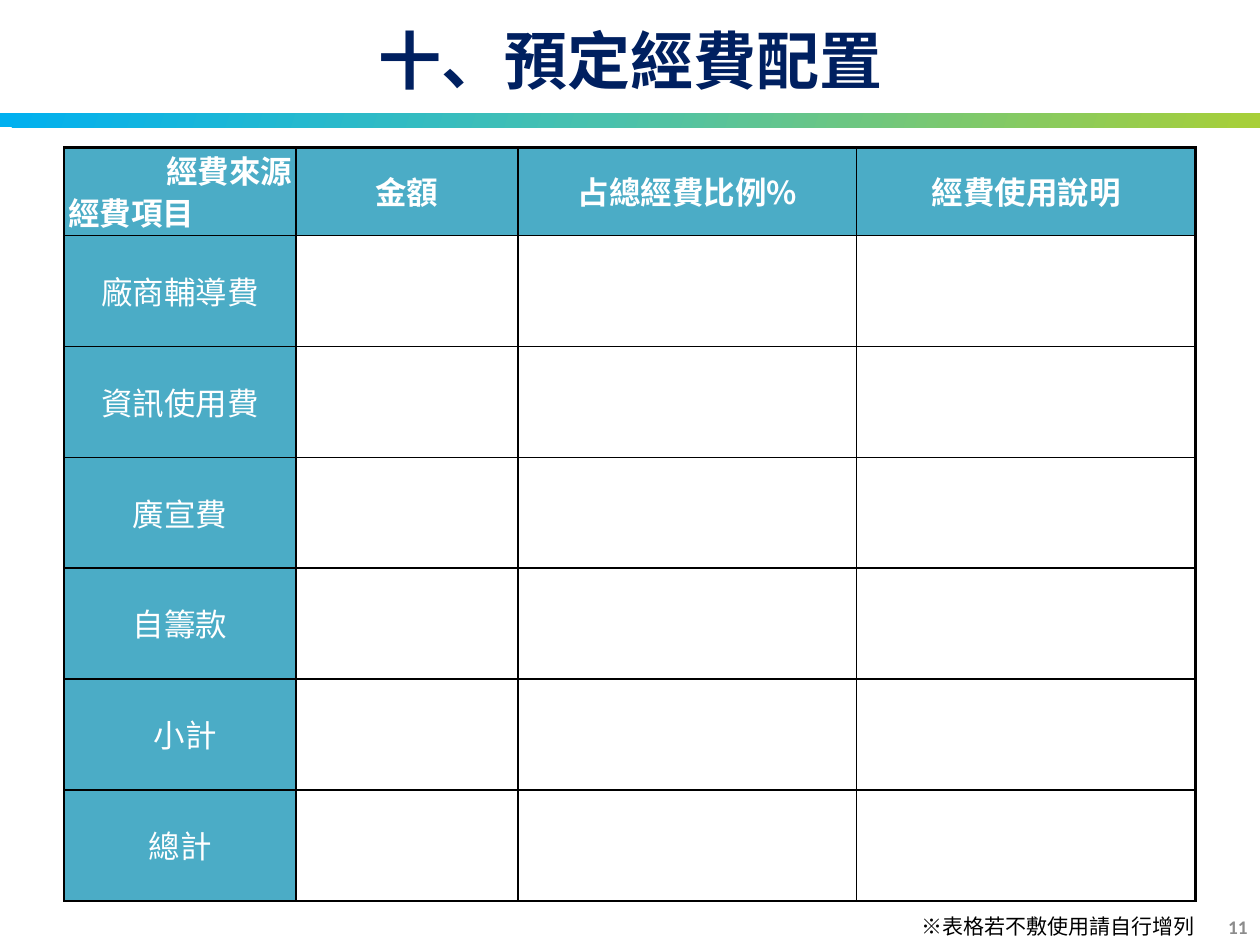
"""Build the budget allocation slide with its table of funding items."""
import pptx
import pptx.dml.color
import pptx.enum.shapes
import pptx.enum.text
import pptx.oxml
import pptx.oxml.ns
import pptx.util
from pptx.util import Inches

THEME = {
    "cjk": "Noto Sans CJK SC", "latin": "Calibri",
    "navy": "002060", "teal": "4BACC6", "white": "FFFFFF", "black": "000000", "gray": "8C8C8C",
    "band": [(0, "00B0F0"), (48, "49C1AD"), (100, "A8CF38")],
    "title": 36, "table": 18, "note": 12, "page": 11,
}
ALIGN = pptx.enum.text.PP_ALIGN
MIDDLE = pptx.enum.text.MSO_ANCHOR.MIDDLE
NS = pptx.oxml.ns.nsdecls("a")


def write(paragraph, text, *, size, color, font=THEME["cjk"], bold=False, align=ALIGN.CENTER, spacing=None):
    paragraph.alignment = align
    paragraph.line_spacing = spacing
    run = paragraph.add_run()
    run.text = text
    run.font.size = pptx.util.Pt(size)
    run.font.bold = bold
    run.font.color.rgb = pptx.dml.color.RGBColor.from_string(color)
    run.font.name = font
    run.font._element.append(pptx.oxml.parse_xml(f'<a:ea {NS} typeface="{font}"/>'))


def draw_borders(cell, widths):
    properties = cell._tc.get_or_add_tcPr()
    for position, (side, width) in enumerate(widths.items()):
        properties.insert(position, pptx.oxml.parse_xml(
            f'<a:ln{side} {NS} w="{pptx.util.Pt(width)}"><a:solidFill>'
            f'<a:srgbClr val="{THEME["black"]}"/></a:solidFill></a:ln{side}>'))


deck = pptx.Presentation()
deck.slide_width, deck.slide_height = Inches(10), Inches(7.5)
slide = deck.slides.add_slide(deck.slide_layouts[5])

title = slide.shapes.title
title.left, title.top, title.width, title.height = Inches(0), Inches(0), Inches(10), Inches(0.94)
title.text_frame.vertical_anchor = MIDDLE
write(title.text_frame.paragraphs[0], "十、預定經費配置", size=THEME["title"], color=THEME["navy"], bold=True)

band = slide.shapes.add_shape(
    pptx.enum.shapes.MSO_SHAPE.RECTANGLE, Inches(0), Inches(0.9), Inches(10), Inches(0.11))
band.shadow.inherit = False
band.line.fill.background()
stops = "".join(f'<a:gs pos="{place * 1000}"><a:srgbClr val="{color}"/></a:gs>'
                for place, color in THEME["band"])
band._element.spPr.find(pptx.oxml.ns.qn("a:prstGeom")).addnext(pptx.oxml.parse_xml(
    f'<a:gradFill {NS}><a:gsLst>{stops}</a:gsLst><a:lin ang="{18 * 60000}" scaled="0"/></a:gradFill>'))
slide.shapes._spTree.insert(2, band._element)

headings = ["經費來源", "金額", "占總經費比例%", "經費使用說明"]
items = ["廠商輔導費", "資訊使用費", "廣宣費", "自籌款", "小計", "總計"]
column_widths = [1.84, 1.76, 2.69, 2.69]
row_heights = [0.7] + [0.88] * len(items)
budget = slide.shapes.add_table(
    len(row_heights), len(column_widths), Inches(0.51), Inches(1.17),
    Inches(sum(column_widths)), Inches(sum(row_heights))).table
budget.first_row = budget.horz_banding = False
for column, width in zip(budget.columns, column_widths):
    column.width = Inches(width)
for row, height in zip(budget.rows, row_heights):
    row.height = Inches(height)

label_format = {"size": THEME["table"], "color": THEME["white"], "spacing": pptx.util.Pt(24)}
last_row, last_column = len(items), len(headings) - 1
for r in range(last_row + 1):
    for c in range(last_column + 1):
        cell = budget.cell(r, c)
        draw_borders(cell, {"L": 1.5 if c == 0 else 1, "R": 1.5 if c == last_column else 1,
                            "T": 1.5 if r == 0 else 1, "B": 1.5 if r == last_row else 1})
        if r and c:
            cell.fill.background()
            continue
        cell.fill.solid()
        cell.fill.fore_color.rgb = pptx.dml.color.RGBColor.from_string(THEME["teal"])
        cell.vertical_anchor = MIDDLE
        cell.margin_left = cell.margin_right = Inches(0.03)
        cell.margin_top, cell.margin_bottom = Inches(0.02), Inches(0)
        label = cell.text_frame.paragraphs[0]
        if r:
            write(label, items[r - 1], **label_format)
            if items[r - 1] == "小計":
                label._p.get_or_add_pPr().set("marL", str(Inches(0.08)))
        else:
            write(label, headings[c], bold=True, align=ALIGN.CENTER if c else ALIGN.RIGHT, **label_format)
write(budget.cell(0, 0).text_frame.add_paragraph(), "經費項目", bold=True, align=ALIGN.JUSTIFY, **label_format)

note = slide.shapes.add_textbox(Inches(7.14), Inches(7.2), Inches(2.52), Inches(0.3)).text_frame
note.word_wrap = True
note.auto_size = pptx.enum.text.MSO_AUTO_SIZE.SHAPE_TO_FIT_TEXT
write(note.paragraphs[0], "※表格若不敷使用請自行增列", size=THEME["note"], color=THEME["black"])

page = slide.shapes.add_textbox(Inches(7.67), Inches(7.16), Inches(2.33), Inches(0.4)).text_frame
page.word_wrap = True
page.vertical_anchor = MIDDLE
page.paragraphs[0].space_after = pptx.util.Pt(6)
write(page.paragraphs[0], "11", size=THEME["page"], color=THEME["gray"], font=THEME["latin"],
      bold=True, align=ALIGN.RIGHT)

deck.save("out.pptx")
